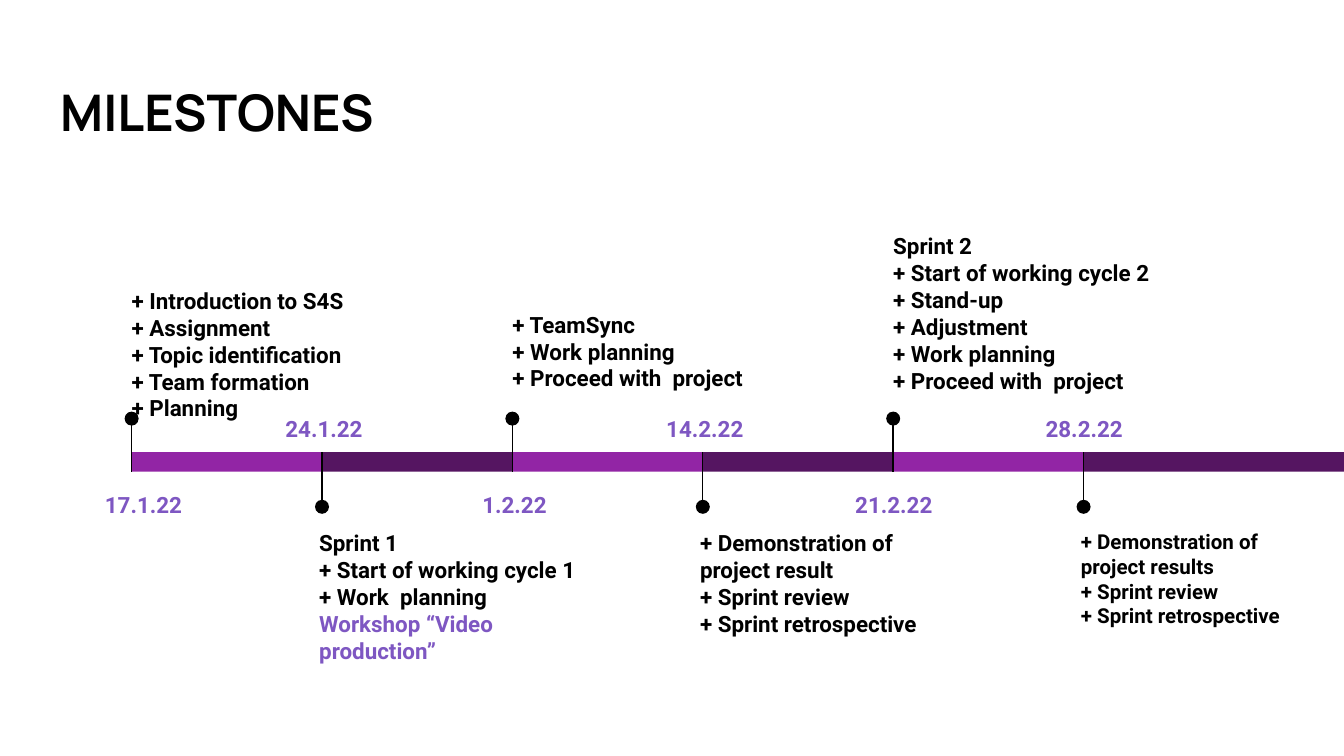
import pptx
import pptx.dml.color
import pptx.enum.shapes
import pptx.enum.text
import pptx.oxml.ns
import pptx.util
from lxml import etree

PX = 9525  # EMU per px, 96 px to the inch
SLIDE_W, SLIDE_H = 960, 540
BLACK, LILAC, PURPLE, PLUM = "000000", "7E57C2", "9225A5", "551561"
SHAPE = pptx.enum.shapes.MSO_SHAPE
ALIGN = pptx.enum.text.PP_ALIGN
ANCHOR = pptx.enum.text.MSO_ANCHOR

BAR_LEFT, BAR_TOP, BAR_H, STEP = 94, 323, 14, 136
DOT = 10
INSET = 10


def rgb(color):
    return pptx.dml.color.RGBColor.from_string(color)


def px(*lengths):
    return [pptx.util.Emu(length * PX) for length in lengths]


def write(frame, lines, size=12, font="Roboto", color=BLACK, align=ALIGN.LEFT,
          anchor=ANCHOR.TOP, spacing=None, after=None, drop=0):
    """Fill a text frame; a line is a string or a (string, colour) pair."""
    frame.word_wrap = True
    frame.auto_size = pptx.enum.text.MSO_AUTO_SIZE.NONE
    frame.vertical_anchor = anchor
    frame.margin_left, frame.margin_right = px(INSET, INSET)
    frame.margin_top, frame.margin_bottom = px(INSET + drop, INSET)
    for index, line in enumerate(lines):
        words, ink = (line, color) if isinstance(line, str) else line
        paragraph = frame.paragraphs[0] if index == 0 else frame.add_paragraph()
        paragraph.alignment = align
        if spacing:
            paragraph.line_spacing = spacing
        if after:
            paragraph.space_after = pptx.util.Pt(after)
        run = paragraph.add_run()
        run.text = words
        run.font.size = pptx.util.Pt(size)
        run.font.name = font
        run.font.bold = True
        run.font.color.rgb = rgb(ink)


class Timeline:
    def __init__(self, slide):
        self.slide = slide

    def title(self, words, left, top, width, height):
        heading = self.slide.shapes.title
        heading.left, heading.top, heading.width, heading.height = px(left, top, width, height)
        write(heading.text_frame, [words], size=27, font="Manrope", anchor=ANCHOR.MIDDLE)

    def text(self, lines, left, top, width, height, **style):
        box = self.slide.shapes.add_textbox(*px(left, top, width, height))
        write(box.text_frame, lines, **style)

    def shape(self, kind, left, top, width, height, color):
        block = self.slide.shapes.add_shape(kind, *px(left, top, width, height))
        block.shadow.inherit = False
        block.fill.solid()
        block.fill.fore_color.rgb = rgb(color)
        block.line.fill.background()

    def line(self, x1, y1, x2, y2):
        stem = self.slide.shapes.add_connector(
            pptx.enum.shapes.MSO_CONNECTOR.STRAIGHT, *px(x1, y1, x2, y2))
        stem.line.color.rgb = rgb(BLACK)
        stem.line.width = pptx.util.Pt(0.75)
        etree.SubElement(stem._element.spPr, pptx.oxml.ns.qn("a:effectLst"))

    def milestone(self, index, date, date_left, date_w, lines, width,
                  top=None, height=99, **style):
        """Draw one bar with its pin; pins go up and down in turn, dates opposite."""
        above = index % 2 == 0
        x = BAR_LEFT + index * STEP
        bar_w = STEP if index < len(MILESTONES) - 1 else SLIDE_W - x
        self.shape(SHAPE.RECTANGLE, x, BAR_TOP, bar_w, BAR_H, PURPLE if above else PLUM)
        dot_y = 299 if above else 362
        self.line(x, dot_y, x, BAR_TOP + BAR_H if above else BAR_TOP)
        self.shape(SHAPE.OVAL, x - DOT // 2, dot_y - DOT // 2, DOT, DOT, BLACK)
        self.text([date], date_left, 338 if above else 284, date_w, 39,
                  color=LILAC, align=ALIGN.CENTER, spacing=1.15, after=16)
        default_top = 195 if above else 368
        self.text(lines, x - (10 if above else 12), top or default_top, width, height, **style)


MILESTONES = [
    dict(date="17.1.22", date_left=60, date_w=85, width=177,
         lines=["+ Introduction to S4S", "+ Assignment", "+ Topic identification",
                "+ Team formation", "+ Planning"]),
    dict(date="24.1.22", date_left=192, date_w=79, width=204,
         lines=["Sprint 1", "+ Start of working cycle 1", "+ Work  planning",
                ("Workshop “Video production”", LILAC)]),
    dict(date="1.2.22", date_left=331, date_w=73, width=185, drop=17,
         lines=["+ TeamSync", "+ Work planning", "+ Proceed with  project"]),
    dict(date="14.2.22", date_left=464, date_w=79, width=177,
         lines=["+ Demonstration of project result", "+ Sprint review",
                "+ Sprint retrospective"]),
    dict(date="21.2.22", date_left=599, date_w=79, width=210, top=156, height=137,
         lines=["Sprint 2", "+ Start of working cycle 2", "+ Stand-up", "+ Adjustment",
                "+ Work planning", "+ Proceed with  project"]),
    dict(date="28.2.22", date_left=735, date_w=79, width=177, size=11,
         lines=["+ Demonstration of project results", "+ Sprint review",
                "+ Sprint retrospective"]),
]


def main():
    deck = pptx.Presentation()
    deck.slide_width, deck.slide_height = px(SLIDE_W, SLIDE_H)
    timeline = Timeline(deck.slides.add_slide(deck.slide_layouts.get_by_name("Title Only")))
    timeline.title("MILESTONES", 33, 47, 895, 65)
    for index, milestone in enumerate(MILESTONES):
        timeline.milestone(index, **milestone)
    deck.save("out.pptx")


if __name__ == "__main__":
    main()
